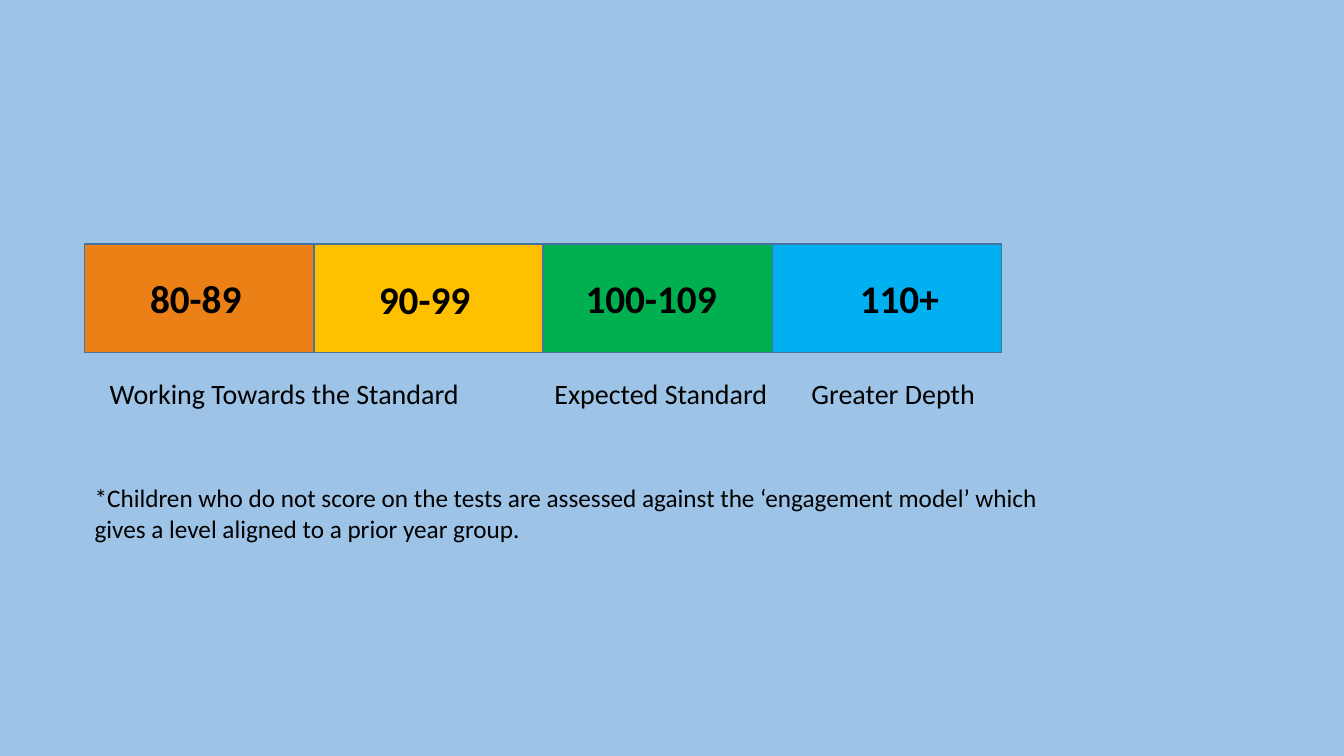
from pptx import Presentation
from pptx.dml.color import RGBColor
from pptx.enum.shapes import MSO_SHAPE
from pptx.util import Inches, Pt

RECT = MSO_SHAPE.RECTANGLE
COLORS = {
    "back": "9DC3E6",
    "edge": "43739E",
    "text": "000000",
    "orange": "EA8016",
    "yellow": "FFC000",
    "green": "00B050",
    "blue": "00B0F0",
}


def color(name):
    return RGBColor.from_string(COLORS[name])


def write(text, left, top, width, height, size, bold=False):
    box = slide.shapes.add_textbox(
        Inches(left), Inches(top), Inches(width), Inches(height))
    frame = box.text_frame
    frame.word_wrap = True
    frame.text = text
    font = frame.paragraphs[0].font
    font.name = "Calibri"
    font.size = Pt(size)
    font.bold = bold
    font.color.rgb = color("text")


deck = Presentation()
deck.slide_width = Inches(13.33)
deck.slide_height = Inches(7.5)
slide = deck.slides.add_slide(deck.slide_layouts[6])
slide.background.fill.solid()
slide.background.fill.fore_color.rgb = color("back")

left, width = 0.84, 2.274
for i, fill in enumerate(["orange", "yellow", "green", "blue"]):
    band = slide.shapes.add_shape(
        RECT, Inches(left + i * width), Inches(2.42), Inches(width), Inches(1.08))
    band.shadow.inherit = False
    band.fill.solid()
    band.fill.fore_color.rgb = color(fill)
    band.line.color.rgb = color("edge")
    band.line.width = Pt(1)

scores = [
    ("80-89", 1.39, 2.67, 1.5),
    ("90-99", 3.66, 2.68, 1.5),
    ("100-109", 5.71, 2.67, 1.73),
    ("110+", 8.43, 2.67, 1.5),
]
for text, x, y, wide in scores:
    write(text, x, y, wide, 0.57, 28, True)

levels = [
    ("Working Towards the Standard", 0.99, 4.2),
    ("Expected Standard", 5.4, 2.5),
    ("Greater Depth", 7.95, 2.2),
]
for text, x, wide in levels:
    write(text, x, 3.69, wide, 0.44, 20)

write("*Children who do not score on the tests are assessed against the "
      "‘engagement model’ which gives a level aligned to a prior year group.",
      left, 4.74, 10.1, 0.71, 18)

deck.save("out.pptx")
